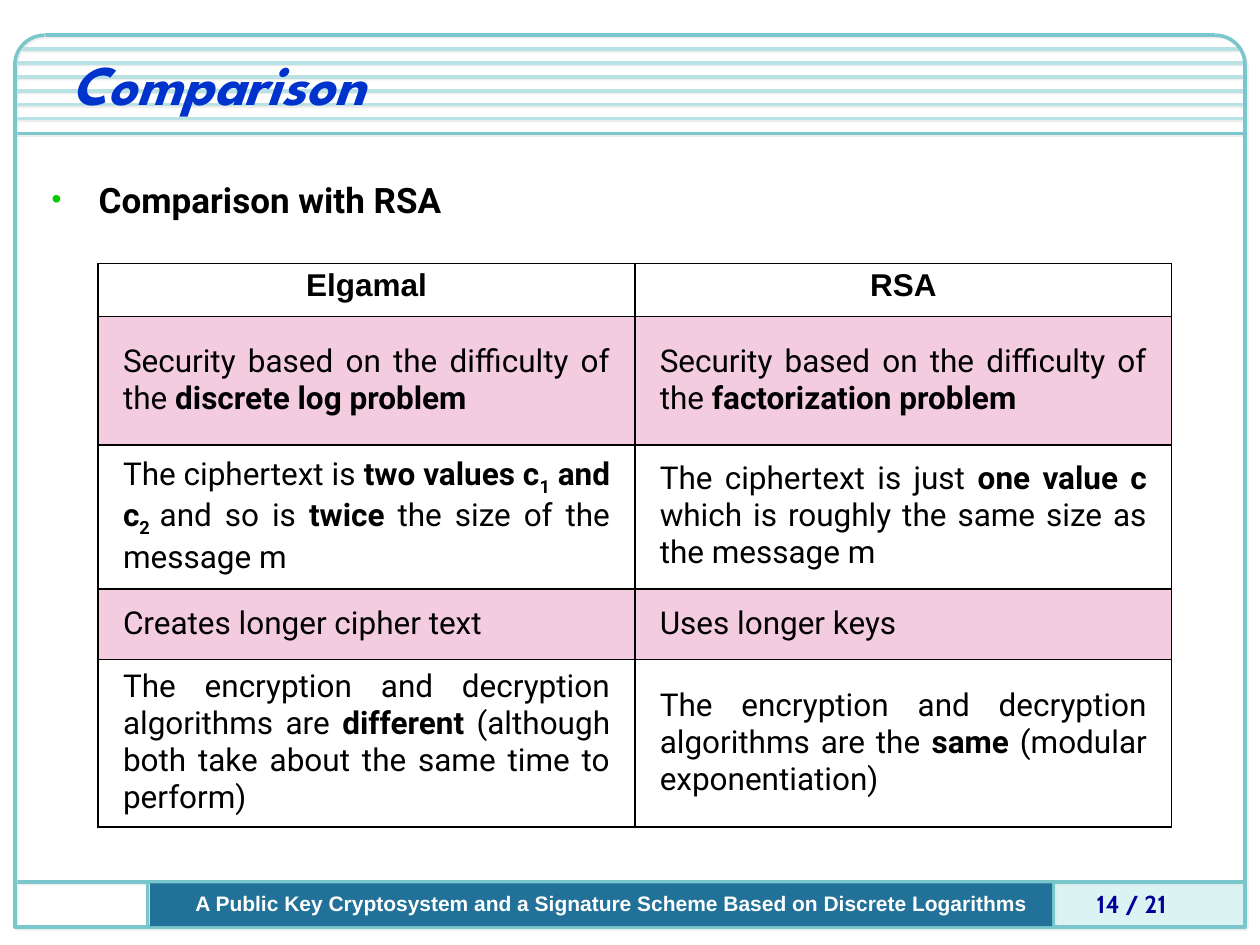
from lxml.etree import SubElement
from pptx import Presentation
from pptx.dml.color import RGBColor
from pptx.enum.shapes import MSO_CONNECTOR as Link, MSO_SHAPE as Shape
from pptx.enum.text import MSO_ANCHOR as Anchor, PP_ALIGN as Align
from pptx.oxml import parse_xml
from pptx.oxml.ns import nsdecls, qn
from pptx.util import Cm, Pt

PLAIN, BOLD, SUB = "plain", "bold", "sub"
TITLE = "Comparison"
TOPIC = "Comparison with RSA"
FOOTER = "A Public Key Cryptosystem and a Signature Scheme Based on Discrete Logarithms"
PAGE_NUMBER = "14 / 21"
HEADERS = ["Elgamal", "RSA"]
ROWS = [
    (
        [("Security based on the difficulty of the ", PLAIN), ("discrete log problem", BOLD)],
        [("Security based on the difficulty of the ", PLAIN), ("factorization problem", BOLD)],
    ),
    (
        [("The ciphertext is ", PLAIN), ("two values c", BOLD), ("1", SUB), (" and c", BOLD),
         ("2 ", SUB), ("and so is ", PLAIN), ("twice", BOLD), (" the size of the message m", PLAIN)],
        [("The ciphertext is just ", PLAIN), ("one value c ", BOLD),
         ("which is roughly the same size as the message m", PLAIN)],
    ),
    (
        [("Creates longer cipher text", PLAIN)],
        [("Uses longer keys", PLAIN)],
    ),
    (
        [("The encryption and decryption algorithms are ", PLAIN), ("different", BOLD),
         (" (although both take about the same time to perform)", PLAIN)],
        [("The encryption and decryption algorithms are the ", PLAIN), ("same", BOLD),
         (" (modular exponentiation)", PLAIN)],
    ),
]
ROW_HEIGHTS = [1.07, 2.59, 2.9, 1.42, 3.38]
COLUMN_WIDTH = 10.82

TEAL, PALE_TEAL = "79C7CD", "B9E2E5"
LEFT, RIGHT, TOP, BOTTOM = 0.3, 25.1, 0.71, 18.69
RADIUS = 0.6
STRIPE_TOP, STRIPE_STEP, STRIPE_COUNT = 0.99, 0.28, 6
TITLE_RULE, FOOTER_RULE = 2.69, 17.78
BAR_TOP, BAR_HEIGHT = 17.81, 0.86
DIVIDERS = [2.97, 21.23]


def color(value):
    return RGBColor.from_string(value)


def style_outline(shape, value):
    shape.line.color.rgb = color(value)
    shape.line.width = Pt(2)
    props = shape._element.spPr
    for old in props.findall(qn("a:effectLst")):
        props.remove(old)
    props.append(parse_xml(
        f'<a:effectLst {nsdecls("a")}><a:outerShdw dist="17780" dir="2700000" algn="ctr" rotWithShape="0">'
        '<a:srgbClr val="DDDDDD"><a:alpha val="50000"/></a:srgbClr></a:outerShdw></a:effectLst>'))


def add_line(page, x1, y1, x2, y2, value=TEAL):
    line = page.shapes.add_connector(Link.STRAIGHT, Cm(x1), Cm(y1), Cm(x2), Cm(y2))
    style_outline(line, value)


def add_bar(page, x, width, value):
    bar = page.shapes.add_shape(Shape.RECTANGLE, Cm(x), Cm(BAR_TOP), Cm(width), Cm(BAR_HEIGHT))
    bar.fill.solid()
    bar.fill.fore_color.rgb = color(value)
    bar.line.fill.background()
    bar.shadow.inherit = False


def add_corner(page, x, start, end):
    arc = page.shapes.add_shape(Shape.ARC, Cm(x), Cm(TOP), Cm(2 * RADIUS), Cm(2 * RADIUS))
    arc.adjustments[0] = start * 0.6
    arc.adjustments[1] = end * 0.6
    arc.fill.background()
    style_outline(arc, TEAL)


def write(para, runs, font="Arial", size=18, value="000000", italic=False, align=Align.LEFT):
    para.alignment = align
    for text, kind in runs:
        span = para.add_run()
        span.text = text
        span.font.name = font
        span.font.size = Pt(size)
        span.font.bold = kind != PLAIN
        span.font.italic = italic
        span.font.color.rgb = color(value)
        if kind == SUB:
            span.font._element.set("baseline", "-25000")


def add_text(page, text, at, anchor=Anchor.MIDDLE, **style):
    box = page.shapes.add_textbox(*map(Cm, at))
    frame = box.text_frame
    frame.word_wrap = True
    frame.vertical_anchor = anchor
    para = frame.paragraphs[0]
    write(para, [(text, BOLD)], **style)
    return para


def add_bullet(para):
    props = para._p.get_or_add_pPr()
    props.set("marL", str(Cm(0.95)))
    props.set("indent", str(Cm(-0.95)))
    tint = SubElement(props, qn("a:buClr"))
    SubElement(tint, qn("a:srgbClr")).set("val", "00CC00")
    SubElement(props, qn("a:buSzPct")).set("val", "80000")
    SubElement(props, qn("a:buFont")).set("typeface", "Arial")
    SubElement(props, qn("a:buChar")).set("char", "•")
    para.line_spacing = 1.1


def style_cell(cell, shaded):
    cell.margin_left = cell.margin_right = Cm(0.5)
    cell.margin_top, cell.margin_bottom = Cm(0.1), Cm(0.13)
    props = cell._tc.get_or_add_tcPr()
    if shaded:
        cell.fill.solid()
        cell.fill.fore_color.rgb = color("CC0066")
        tint = props.find(qn("a:solidFill")).find(qn("a:srgbClr"))
        SubElement(tint, qn("a:alpha")).set("val", "20000")
    else:
        cell.fill.background()
    for place, side in enumerate(["lnL", "lnR", "lnT", "lnB"]):
        props.insert(place, parse_xml(
            f'<a:{side} {nsdecls("a")} w="12700"><a:solidFill>'
            f'<a:srgbClr val="000000"/></a:solidFill></a:{side}>'))


def add_comparison(page):
    lines = [[[(name, BOLD)] for name in HEADERS], *ROWS]
    frame = page.shapes.add_table(len(lines), len(HEADERS), Cm(1.98), Cm(5.31),
                                  Cm(COLUMN_WIDTH * len(HEADERS)), Cm(sum(ROW_HEIGHTS)))
    table = frame.table
    table.first_row = table.horz_banding = False
    for column in table.columns:
        column.width = Cm(COLUMN_WIDTH)
    for index, (height, line) in enumerate(zip(ROW_HEIGHTS, lines)):
        table.rows[index].height = Cm(height)
        for cell, runs in zip(table.rows[index].cells, line):
            style_cell(cell, shaded=index % 2 == 1)
            para = cell.text_frame.paragraphs[0]
            if index == 0:
                write(para, runs, align=Align.CENTER)
            else:
                cell.vertical_anchor = Anchor.MIDDLE
                write(para, runs, font="Roboto", align=Align.JUSTIFY)


def add_frame(page):
    add_bar(page, 19.96, 5.11, "DCF3F4")
    add_line(page, LEFT, TITLE_RULE, RIGHT, TITLE_RULE)
    for index in range(STRIPE_COUNT):
        y = STRIPE_TOP + index * STRIPE_STEP
        inset = 0.12 if index == 0 else 0
        add_line(page, LEFT + inset, y, RIGHT - inset, y, PALE_TEAL)
    add_line(page, LEFT, FOOTER_RULE, RIGHT, FOOTER_RULE)
    for x in DIVIDERS:
        add_line(page, x, BAR_TOP, x, BAR_TOP + BAR_HEIGHT)
    add_line(page, LEFT + RADIUS, TOP, RIGHT - RADIUS, TOP)
    add_corner(page, LEFT, 180, 270)
    add_corner(page, RIGHT - 2 * RADIUS, 270, 0)
    shoulder = TOP + RADIUS
    outline = page.shapes.build_freeform(Cm(LEFT), Cm(shoulder))
    corners = [(LEFT, BOTTOM), (RIGHT, BOTTOM), (RIGHT, shoulder)]
    outline.add_line_segments([(Cm(x), Cm(y)) for x, y in corners], close=False)
    border = outline.convert_to_shape()
    border.fill.background()
    style_outline(border, TEAL)
    add_bar(page, 3.02, 18.19, "227198")


def main():
    deck = Presentation()
    deck.slide_width, deck.slide_height = Cm(25.4), Cm(19.05)
    page = deck.slides.add_slide(deck.slide_layouts[6])
    add_frame(page)
    add_text(page, TITLE, (1.19, 0.36, 24.21, 2.11), anchor=Anchor.BOTTOM,
             font="League Spartan", size=32, value="0033CC", italic=True)
    topic = add_text(page, TOPIC, (0.79, 3.38, 23.7, 13.54), anchor=Anchor.TOP, font="Roboto", size=20)
    add_bullet(topic)
    add_text(page, PAGE_NUMBER, (21.44, 17.58, 2.74, 1.27),
             font="Cabin", size=14, value="000099", align=Align.CENTER)
    add_text(page, FOOTER, (2.59, 17.58, 19.48, 1.27), size=12, value="FFFFFF", align=Align.CENTER)
    add_comparison(page)
    deck.save("out.pptx")


if __name__ == "__main__":
    main()
